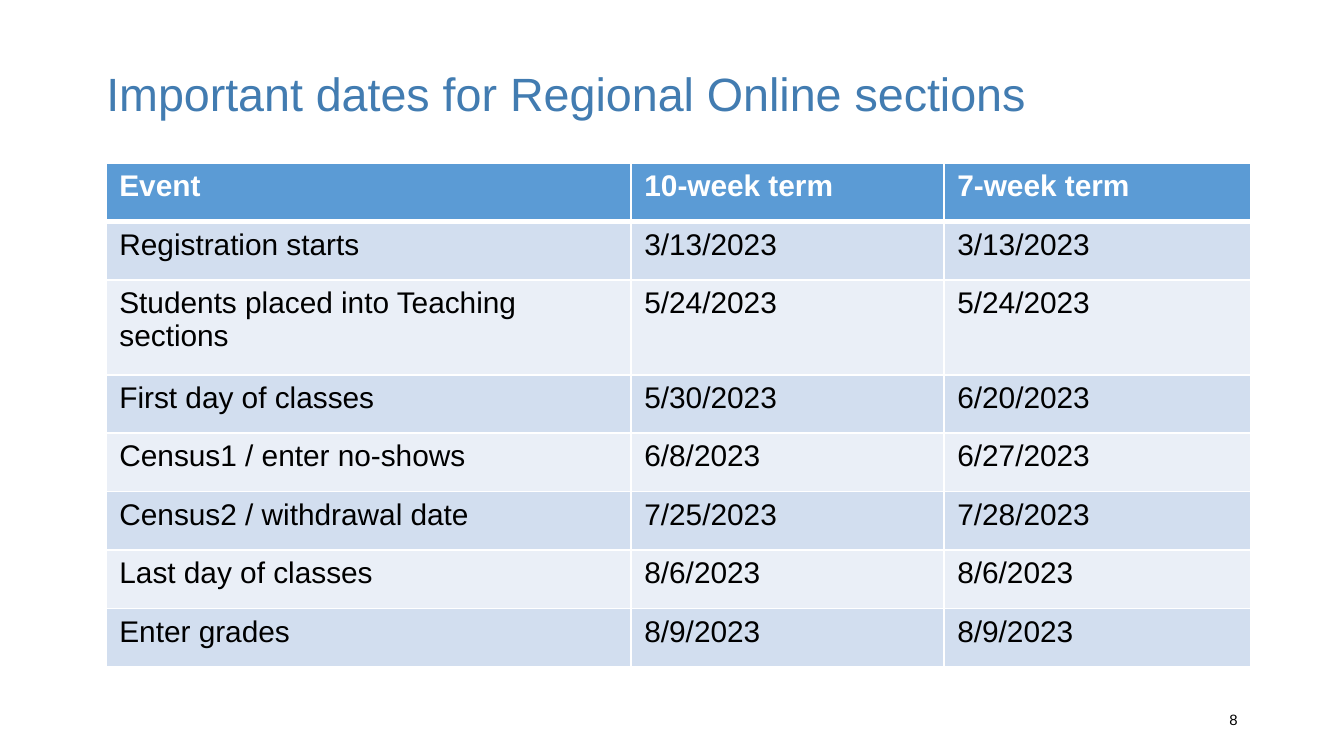
from lxml.etree import SubElement
from pptx import Presentation
from pptx.dml.color import RGBColor
from pptx.enum.text import MSO_ANCHOR, PP_ALIGN
from pptx.oxml.ns import qn
from pptx.util import Emu, Pt

TITLE = "Important dates for Regional Online sections"
PAGE_NUMBER = "8"
DATES = [
    ("Event", "10-week term", "7-week term"),
    ("Registration starts", "3/13/2023", "3/13/2023"),
    ("Students placed into Teaching sections", "5/24/2023", "5/24/2023"),
    ("First day of classes", "5/30/2023", "6/20/2023"),
    ("Census1 / enter no-shows", "6/8/2023", "6/27/2023"),
    ("Census2 / withdrawal date", "7/25/2023", "7/28/2023"),
    ("Last day of classes", "8/6/2023", "8/6/2023"),
    ("Enter grades", "8/9/2023", "8/9/2023"),
]
COLUMN_WIDTHS = [525, 313, 307]
TABLE_LEFT, TABLE_TOP, TABLE_HEIGHT = 106, 163, 504
TALL_ROW, TALL_HEIGHT = 2, 95
HEADER_FILL = "5B9BD5"
BAND_FILLS = ["EAEFF7", "D2DEEF"]
WHITE, BLACK, TITLE_BLUE = "FFFFFF", "000000", "427CB1"


def px(length):
    return Emu(round(length * 914400 / 134.4))


def color(value):
    return RGBColor.from_string(value)


def write(frame, text, size, ink, bold=False):
    para = frame.paragraphs[0]
    span = para.add_run()
    span.text = text
    span.font.name = "Arial"
    span.font.size = Pt(size)
    span.font.bold = bold
    span.font.color.rgb = color(ink)
    return para


def add_text(page, bounds, text, size, ink):
    box = page.shapes.add_textbox(*map(px, bounds))
    frame = box.text_frame
    frame.word_wrap = True
    frame.vertical_anchor = MSO_ANCHOR.MIDDLE
    return write(frame, text, size, ink)


def add_borders(cell, bottom, top):
    properties = cell._tc.get_or_add_tcPr()
    widths = {"a:lnL": 1, "a:lnR": 1, "a:lnT": top, "a:lnB": bottom}
    for position, (side, width) in enumerate(widths.items()):
        line = SubElement(properties, qn(side), w=str(Pt(width)))
        fill = SubElement(line, qn("a:solidFill"))
        SubElement(fill, qn("a:srgbClr"), val=WHITE)
        properties.insert(position, line)


def add_dates(page):
    bounds = (TABLE_LEFT, TABLE_TOP, sum(COLUMN_WIDTHS), TABLE_HEIGHT)
    frame = page.shapes.add_table(len(DATES), len(COLUMN_WIDTHS), *map(px, bounds))
    table = frame.table
    for column, width in zip(table.columns, COLUMN_WIDTHS):
        column.width = px(width)
    plain_height = (TABLE_HEIGHT - TALL_HEIGHT) / (len(DATES) - 1)
    for r, texts in enumerate(DATES):
        header = r == 0
        table.rows[r].height = px(TALL_HEIGHT if r == TALL_ROW else plain_height)
        for c, text in enumerate(texts):
            cell = table.cell(r, c)
            cell.fill.solid()
            cell.fill.fore_color.rgb = color(HEADER_FILL if header else BAND_FILLS[r % 2])
            write(cell.text_frame, text, 16, WHITE if header else BLACK, header)
            add_borders(cell, bottom=3 if header else 1, top=3 if r == 1 else 1)


def main():
    deck = Presentation()
    deck.slide_width, deck.slide_height = px(1344), px(756)
    page = deck.slides.add_slide(deck.slide_layouts[6])
    title = add_text(page, (93, 40, 1158, 113), TITLE, 25, TITLE_BLUE)
    title.line_spacing = 0.9
    number = add_text(page, (949, 700, 302, 40), PAGE_NUMBER, 8, BLACK)
    number.alignment = PP_ALIGN.RIGHT
    add_dates(page)
    deck.save("out.pptx")


if __name__ == "__main__":
    main()
